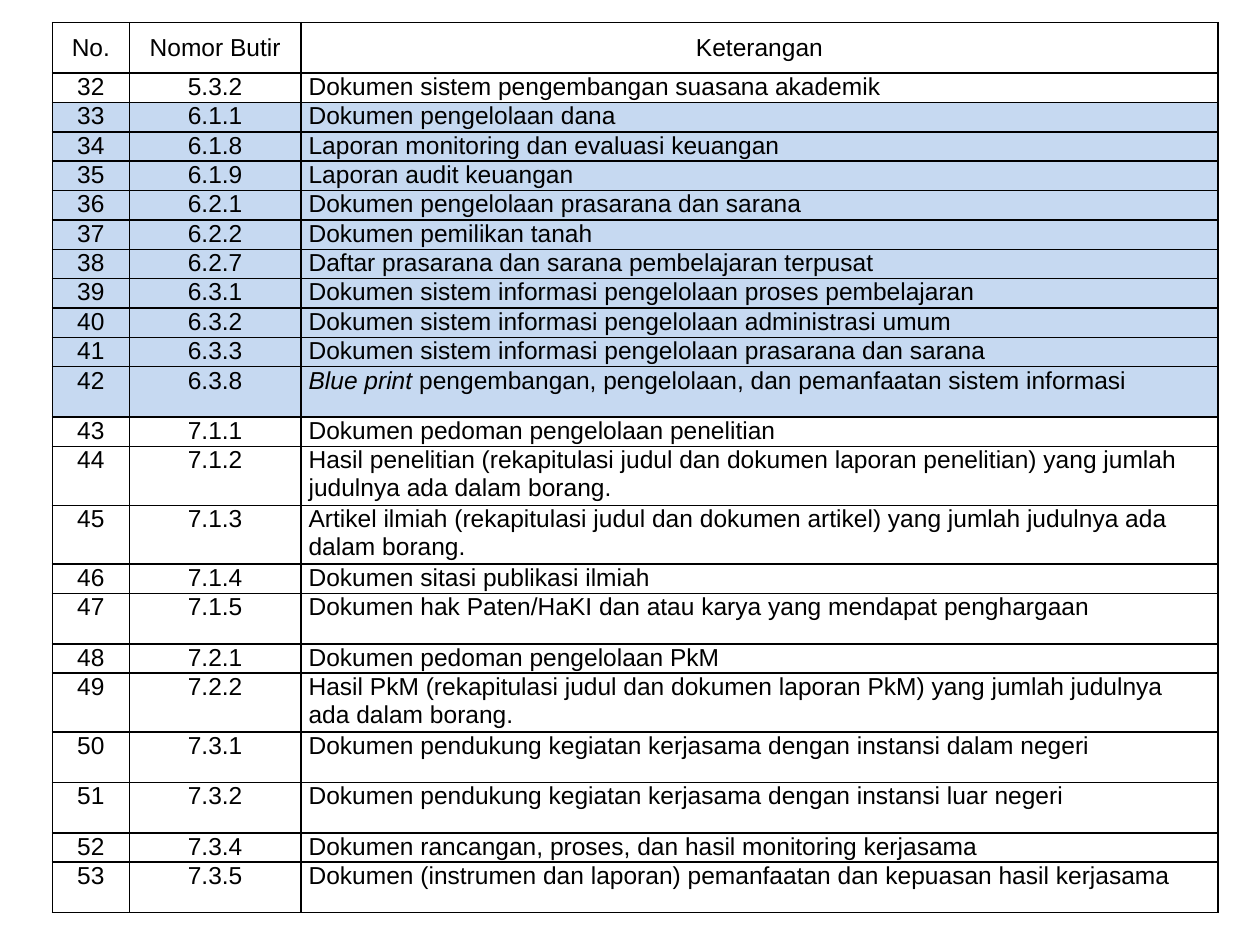
from lxml import etree
from pptx import Presentation
from pptx import util as u
from pptx.dml.color import RGBColor
from pptx.enum import text
from pptx.oxml import ns

PX = 3048
BLACK = RGBColor(0x00, 0x00, 0x00)
LIGHT_BLUE = RGBColor(0xC6, 0xD9, 0xF1)
FONT, SIZE = "Arial", 14
COLUMNS = (183, 409, 2183)
SHORT_ROW, TALL_ROW, WRAPPED_ROW = 70, 120, 140
SHORT_CHARS, LINE_CHARS = 60, 80
FIRST_NUMBER = 32
FOREIGN_TERM = "Blue print"
HEADINGS = ("No.", "Nomor Butir", "Keterangan")
DOCUMENTS = (
    ("5.3.2", "Dokumen sistem pengembangan suasana akademik"),
    ("6.1.1", "Dokumen pengelolaan dana"),
    ("6.1.8", "Laporan monitoring dan evaluasi keuangan"),
    ("6.1.9", "Laporan audit keuangan"),
    ("6.2.1", "Dokumen pengelolaan prasarana dan sarana"),
    ("6.2.2", "Dokumen pemilikan tanah"),
    ("6.2.7", "Daftar prasarana dan sarana pembelajaran terpusat"),
    ("6.3.1", "Dokumen sistem informasi pengelolaan proses pembelajaran"),
    ("6.3.2", "Dokumen sistem informasi pengelolaan administrasi umum"),
    ("6.3.3", "Dokumen sistem informasi pengelolaan prasarana dan sarana"),
    ("6.3.8", "Blue print pengembangan, pengelolaan, dan pemanfaatan sistem informasi"),
    ("7.1.1", "Dokumen pedoman pengelolaan penelitian"),
    ("7.1.2", "Hasil penelitian (rekapitulasi judul dan dokumen laporan penelitian) "
              "yang jumlah judulnya ada dalam borang."),
    ("7.1.3", "Artikel ilmiah (rekapitulasi judul dan dokumen artikel) "
              "yang jumlah judulnya ada dalam borang."),
    ("7.1.4", "Dokumen sitasi publikasi ilmiah"),
    ("7.1.5", "Dokumen hak Paten/HaKI dan atau karya yang mendapat penghargaan"),
    ("7.2.1", "Dokumen pedoman pengelolaan PkM"),
    ("7.2.2", "Hasil PkM (rekapitulasi judul dan dokumen laporan PkM) "
              "yang jumlah judulnya ada dalam borang."),
    ("7.3.1", "Dokumen pendukung kegiatan kerjasama dengan instansi dalam negeri"),
    ("7.3.2", "Dokumen pendukung kegiatan kerjasama dengan instansi luar negeri"),
    ("7.3.4", "Dokumen rancangan, proses, dan hasil monitoring kerjasama"),
    ("7.3.5", "Dokumen (instrumen dan laporan) pemanfaatan dan kepuasan hasil kerjasama"),
)


def px(n):
    """Turn whole pixels into EMU."""
    return u.Emu(n * PX)


def add_run(p, words, size=SIZE, color=BLACK, italic=False):
    """Append formatted words to a paragraph."""
    r = p.add_run()
    r.text = words
    r.font.name, r.font.size = FONT, u.Pt(size)
    r.font.color.rgb, r.font.italic = color, italic


def set_borders(cell, color=BLACK, width=1):
    """Draw a solid line on all four sides of a cell."""
    tcPr = cell._tc.get_or_add_tcPr()
    for i, side in enumerate(("lnL", "lnR", "lnT", "lnB")):
        ln = etree.Element(ns.qn(f"a:{side}"), w=str(u.Pt(width)))
        fill = etree.SubElement(ln, ns.qn("a:solidFill"))
        etree.SubElement(fill, ns.qn("a:srgbClr"), val=str(color))
        tcPr.insert(i, ln)


def fill_cell(cell, words, fill=None, centred=True, anchor=text.MSO_ANCHOR.TOP):
    """Write and format one table cell."""
    cell.margin_left = cell.margin_right = px(18)
    cell.margin_top = cell.margin_bottom = 0
    cell.vertical_anchor = anchor
    if fill is None:
        cell.fill.background()
    else:
        cell.fill.solid()
        cell.fill.fore_color.rgb = fill
    set_borders(cell)
    p = cell.text_frame.paragraphs[0]
    p.alignment = text.PP_ALIGN.CENTER if centred else text.PP_ALIGN.LEFT
    if words.startswith(FOREIGN_TERM):
        add_run(p, FOREIGN_TERM, italic=True)
        words = words.removeprefix(FOREIGN_TERM)
    add_run(p, words)


def row_height(description):
    """Choose a row height from the length of its description."""
    if len(description) > LINE_CHARS:
        return WRAPPED_ROW
    return TALL_ROW if len(description) > SHORT_CHARS else SHORT_ROW


def add_document_table(s, left, top):
    """Add the table of documents, with the items of standard 6 shaded."""
    heights = [TALL_ROW] + [row_height(d) for _, d in DOCUMENTS]
    frame = s.shapes.add_table(len(heights), len(COLUMNS), px(left), px(top),
                               px(sum(COLUMNS)), px(sum(heights)))
    table = frame.table
    table.first_row = table.horz_banding = False
    for column, width in zip(table.columns, COLUMNS):
        column.width = px(width)
    for row, height in zip(table.rows, heights):
        row.height = px(height)
    for c, heading in enumerate(HEADINGS):
        fill_cell(table.cell(0, c), heading, anchor=text.MSO_ANCHOR.MIDDLE)
    for i, (item, description) in enumerate(DOCUMENTS):
        fill = LIGHT_BLUE if item.startswith("6.") else None
        for c, words in enumerate((str(FIRST_NUMBER + i), item, description)):
            fill_cell(table.cell(i + 1, c), words, fill=fill, centred=c < 2)


def main():
    """Build and save the slide."""
    prs = Presentation()
    prs.slide_width, prs.slide_height = px(3000), px(2250)
    s = prs.slides.add_slide(prs.slide_layouts[6])
    add_document_table(s, 125, 54)
    prs.save("out.pptx")


if __name__ == "__main__":
    main()
